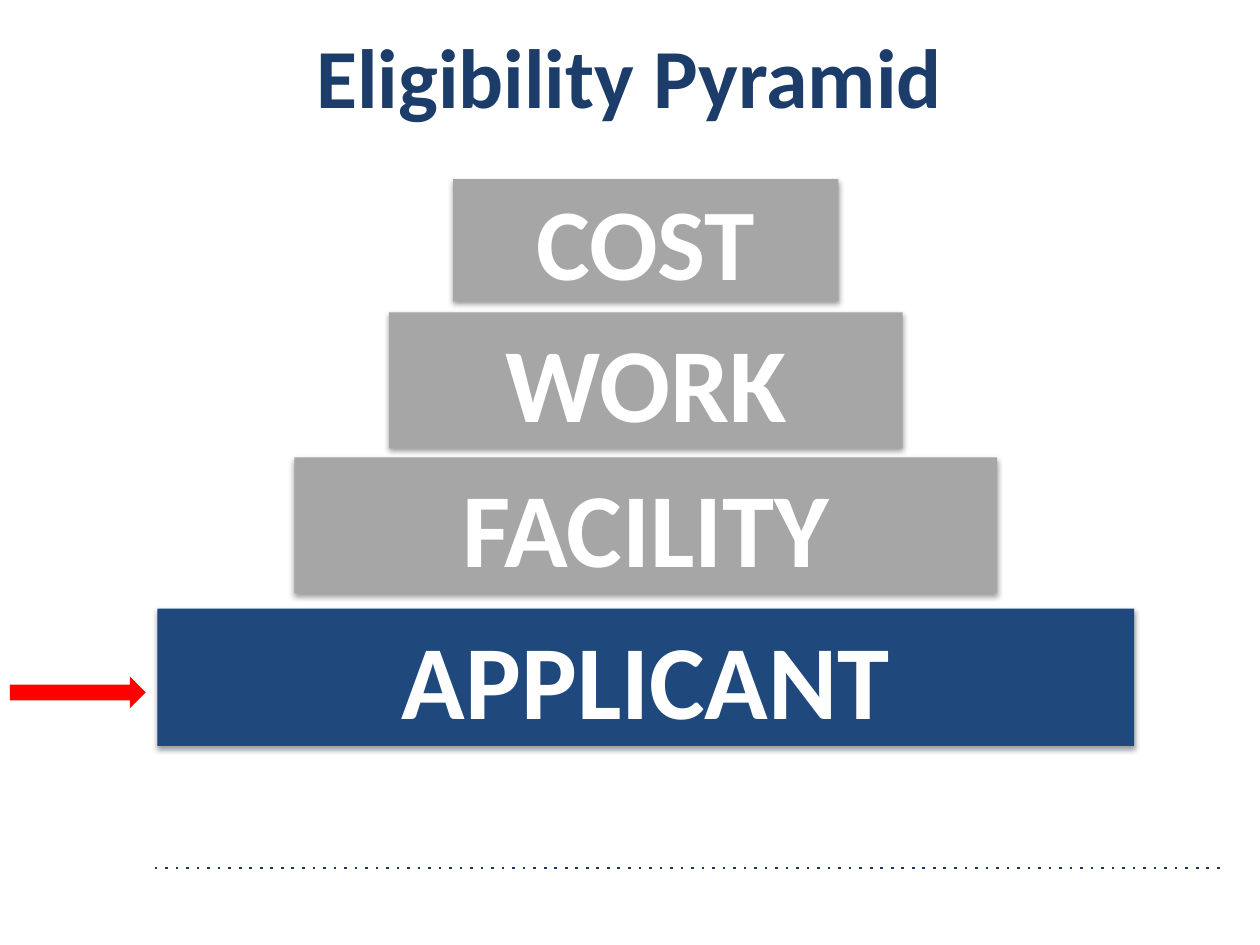
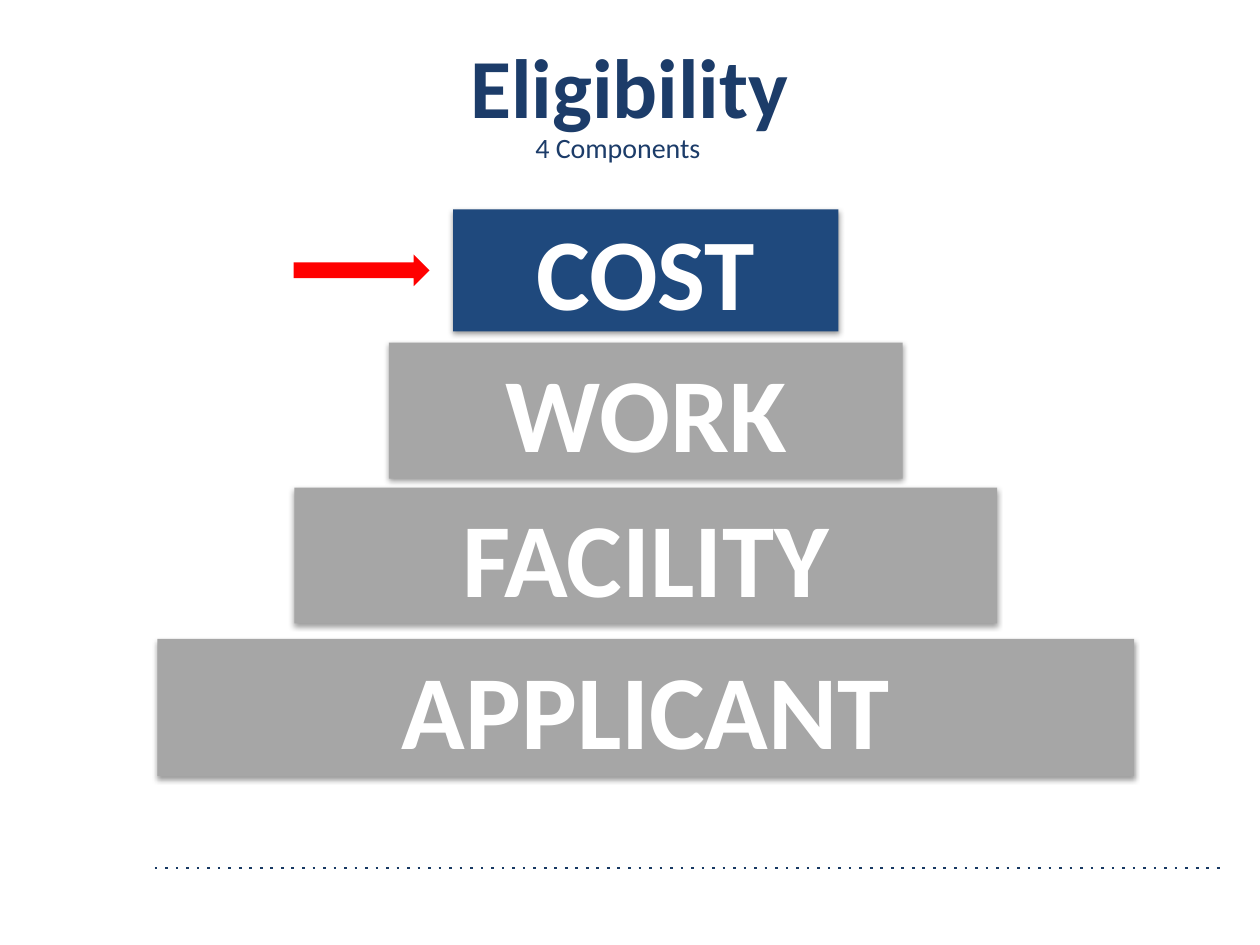
import pptx
import pptx.util
import pptx.oxml
import pptx.oxml.ns
import pptx.dml.color
import pptx.enum.dml
import pptx.enum.shapes
import pptx.enum.text

Cm = pptx.util.Cm
Kind = pptx.enum.shapes.MSO_SHAPE
Align = pptx.enum.text.PP_ALIGN
Anchor = pptx.enum.text.MSO_ANCHOR
qn = pptx.oxml.ns.qn

HUES = {"title": "1C3C69", "rule": "173963", "on": "1F497D",
        "off": "A6A6A6", "text": "FFFFFF", "arrow": "FF0000"}
SHADE = (
    '<a:effectLst xmlns:a="http://schemas.openxmlformats.org/drawingml/2006/main">'
    '<a:outerShdw blurRad="40000" dist="20000" dir="5400000" rotWithShape="0">'
    '<a:srgbClr val="000000"><a:alpha val="38000"/></a:srgbClr>'
    '</a:outerShdw></a:effectLst>')


def color(name):
    return pptx.dml.color.RGBColor.from_string(HUES[name])


def write(shape, text, size, hue="title", bold=True, align=Align.CENTER,
          anchor=Anchor.MIDDLE, wrap=True):
    frame = shape.text_frame
    frame.text = text
    frame.word_wrap = wrap
    frame.auto_size = pptx.enum.text.MSO_AUTO_SIZE.NONE
    frame.vertical_anchor = anchor
    para = frame.paragraphs[0]
    para.alignment = align
    para.space_before = pptx.util.Pt(0)
    font = para.runs[0].font
    font.name = "Calibri"
    font.size = pptx.util.Pt(size)
    font.bold = bold
    font.color.rgb = color(hue)


MID = 13.02
TIERS = [
    ("APPLICANT", 12.27, 19.69, 2.77, 60),
    ("FACILITY", 9.22, 14.17, 2.74, 60),
    ("WORK", 6.3, 10.36, 2.74, 60),
    ("COST", 3.61, 7.77, 2.46, 58),
]
PAGES = [
    dict(title="Eligibility Pyramid", top=0.25, sub=None, shift=0,
         focus="APPLICANT", arrow=(0.2, 13.64)),
    dict(title="Eligibility", top=0.46, sub="4 Components", shift=0.61,
         focus="COST", arrow=(5.92, 5.13)),
]

deck = pptx.Presentation()
deck.slide_width = Cm(25.4)
deck.slide_height = Cm(19.05)

for page in PAGES:
    layout = deck.slide_layouts[1 if page["sub"] else 5]
    slide = deck.slides.add_slide(layout)

    rule = slide.shapes.add_connector(
        pptx.enum.shapes.MSO_CONNECTOR.STRAIGHT,
        Cm(3.12), Cm(17.5), Cm(24.61), Cm(17.5))
    rule.line.color.rgb = color("rule")
    rule.line.width = pptx.util.Pt(1.5)
    rule.line.dash_style = pptx.enum.dml.MSO_LINE.ROUND_DOT
    props = rule._element.spPr
    props.find(".//" + qn("a:prstDash")).set("val", "dot")
    props.append(pptx.oxml.parse_xml(
        '<a:effectLst xmlns:a="http://schemas.openxmlformats.org/drawingml/2006/main"/>'))

    title = slide.shapes.title
    title.left, title.top = Cm(1.63), Cm(page["top"])
    title.width, title.height = Cm(22.12), Cm(2.51)
    write(title, page["title"], 48)

    if page["sub"]:
        body = slide.placeholders[1]
        body.left, body.top = Cm(10.54), Cm(2.51)
        body.width, body.height = Cm(14.6), Cm(3.61)
        body.text_frame.text = page["sub"]
        write(body, page["sub"], 16, bold=False, align=Align.LEFT,
              anchor=Anchor.TOP)
        props = body.text_frame.paragraphs[0]._p.get_or_add_pPr()
        props.set("marL", "0")
        props.set("indent", "0")
        props.append(props.makeelement(qn("a:buNone"), {}))

    stack = slide.shapes.add_group_shape()
    for name, top, width, height, size in TIERS:
        tier = stack.shapes.add_shape(
            Kind.RECTANGLE, Cm(MID - width / 2), Cm(top + page["shift"]),
            Cm(width), Cm(height))
        tier.fill.solid()
        tier.fill.fore_color.rgb = color("on" if name == page["focus"] else "off")
        tier.line.fill.background()
        tier._element.spPr.append(pptx.oxml.parse_xml(SHADE))
        write(tier, name, size, hue="text", wrap=False)

    left, top = page["arrow"]
    arrow = slide.shapes.add_shape(
        Kind.RIGHT_ARROW, Cm(left), Cm(top), Cm(2.74), Cm(0.64))
    arrow.shadow.inherit = False
    arrow.fill.solid()
    arrow.fill.fore_color.rgb = color("arrow")
    arrow.line.fill.background()

deck.save("out.pptx")
